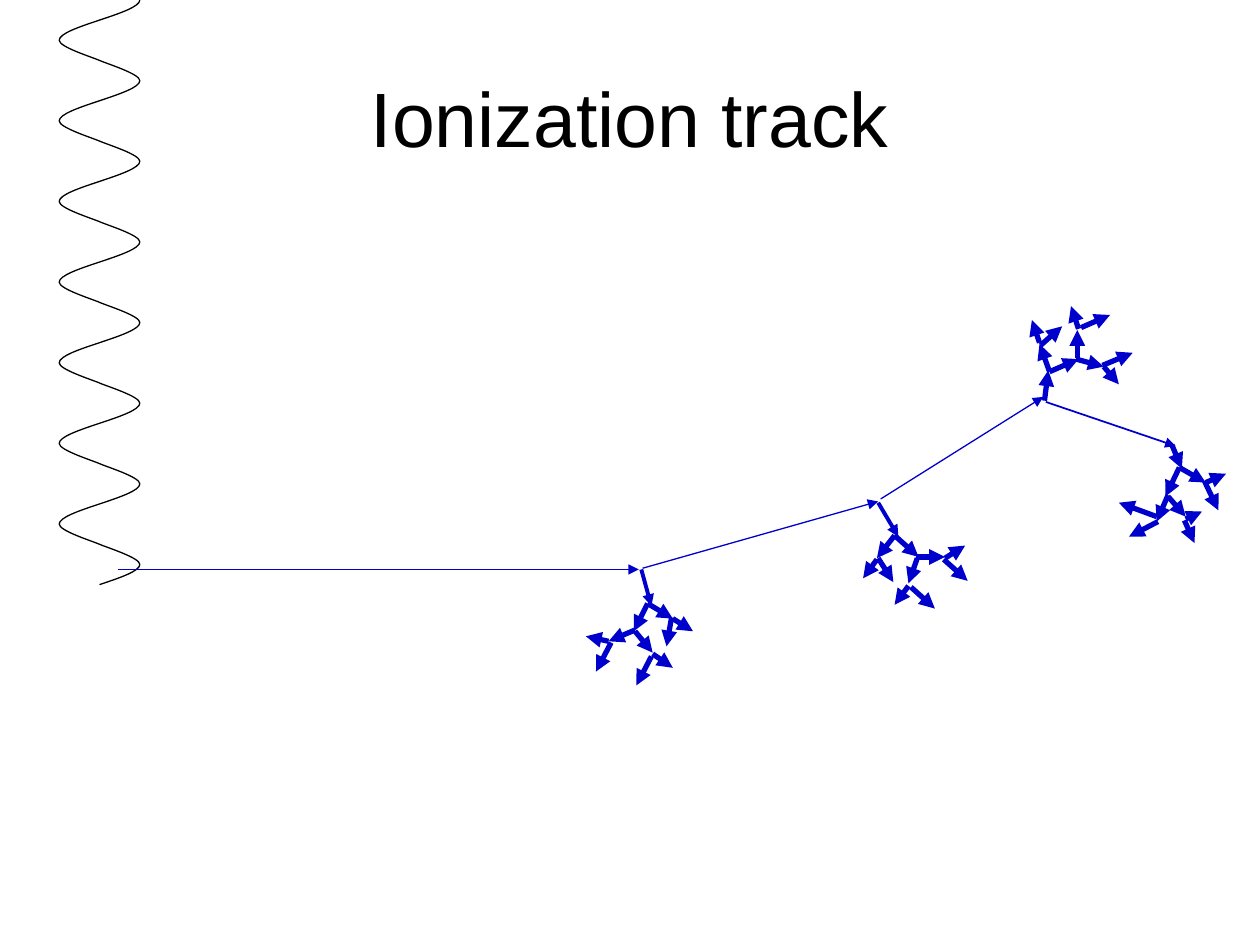
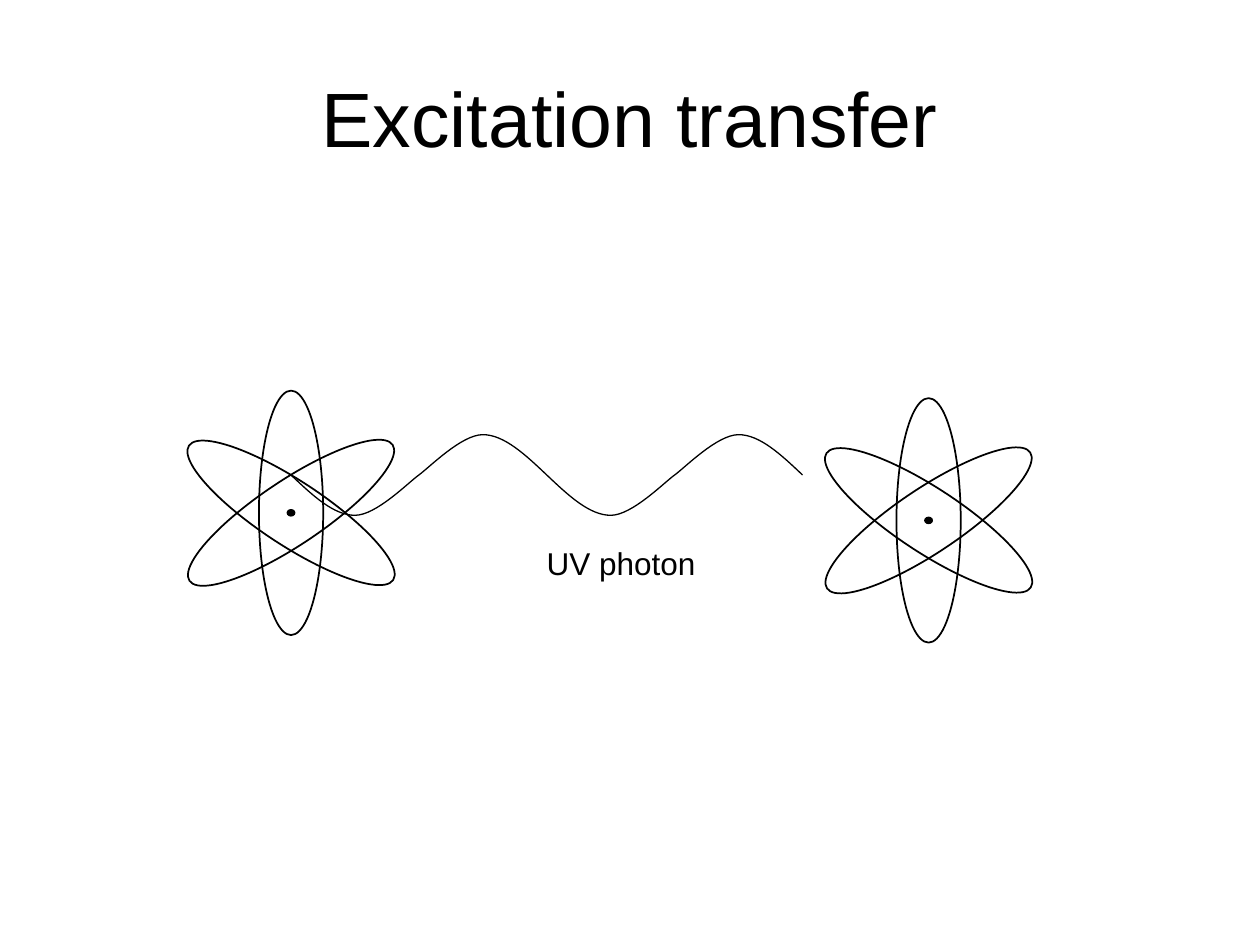
from lxml.etree import SubElement
from pptx import Presentation
from pptx.dml.color import RGBColor
from pptx.enum.shapes import MSO_CONNECTOR, MSO_SHAPE
from pptx.enum.text import MSO_ANCHOR, MSO_AUTO_SIZE, PP_ALIGN
from pptx.oxml.ns import qn
from pptx.util import Emu, Pt

PX = 9144  # 100 px to the inch
COLORS = {"ink": "000000", "electron": "0000CC"}
FONT = "Arial"
TITLE_BOX = (50, 30, 900, 125)

# One half wave: (share of the length, share of the swing), as two cubic curves
LOBE = [(0, 0), (1 / 6, 0.5), (1 / 3, 1), (0.5, 1), (2 / 3, 1), (11 / 12, 0.19), (1, 0)]
OPPOSITE_LOBE = [(1 - along, -across) for along, across in reversed(LOBE)]

# Primary electron path: x1, y1, x2, y2, line width
TRACK = [
    (94, 452, 507, 452, 0.5),
    (510, 451, 697, 398, 0.75),
    (699, 396, 828, 315, 0.75),
    (830, 319, 933, 354, 1),
]

# Avalanches: origin, width of the first arrow, arrows relative to the origin
AVALANCHES = [
    ((509, 452), 2.25, [
        (0, 0, 8, 29), (5, 27, -6, 49), (-5, 48, -26, 57), (-5, 49, 9, 66),
        (8, 69, -4, 92), (5, 27, 25, 39), (-24, 58, -36, 81), (-26, 57, -44, 53),
        (24, 38, 20, 61), (25, 39, 41, 49), (9, 67, 25, 78)]),
    ((697, 399), 2.25, [
        (0, 0, 16, 27), (13, 26, 32, 43), (30, 43, 53, 43), (31, 44, 24, 64),
        (26, 67, 45, 84), (13, 26, -1, 44), (52, 45, 71, 62), (53, 44, 69, 34),
        (0, 44, 12, 63), (-1, 45, -12, 60), (24, 66, 13, 81)]),
    ((829, 318), 3, [
        (0, 0, 3, -24), (4, -23, 27, -33), (25, -33, 47, -27), (26, -34, 26, -56),
        (29, -58, 52, -68), (4, -23, -4, -45), (46, -28, 70, -38), (47, -27, 59, -13),
        (-3, -44, 14, -59), (-4, -46, -10, -64), (27, -57, 21, -75)]),
    ((930, 353), 3, [
        (0, 0, 8, 19), (6, 18, -5, 41), (-3, 40, -12, 61), (-3, 41, 11, 57),
        (10, 60, 18, 78), (6, 18, 27, 30), (-11, 61, -34, 73), (-12, 57, -42, 46),
        (26, 29, 37, 52), (27, 30, 43, 23), (11, 59, 24, 53)]),
]


def px(*lengths):
    return [Emu(round(length * PX)) for length in lengths]


def color(name):
    return RGBColor.from_string(COLORS[name])


def write_text(shape, text, *, size, align=PP_ALIGN.LEFT, anchor=MSO_ANCHOR.TOP, wrap=True):
    frame = shape.text_frame
    frame.word_wrap = wrap
    frame.vertical_anchor = anchor
    paragraph = frame.paragraphs[0]
    paragraph.text = text
    paragraph.alignment = align
    paragraph.font.name = FONT
    paragraph.font.size = Pt(size)
    paragraph.font.color.rgb = color("ink")


def set_line(shape, name, width):
    shape.line.color.rgb = color(name)
    shape.line.width = Pt(width)


def add_titled_slide(presentation, text):
    slide = presentation.slides.add_slide(presentation.slide_layouts[5])
    title = slide.shapes.title
    title.left, title.top, title.width, title.height = px(*TITLE_BOX)
    write_text(title, text, size=44, align=PP_ALIGN.CENTER, anchor=MSO_ANCHOR.MIDDLE)
    return slide


def add_arrow(slide, x1, y1, x2, y2, width):
    arrow = slide.shapes.add_connector(MSO_CONNECTOR.STRAIGHT, *px(x1, y1, x2, y2))
    set_line(arrow, "electron", width)
    SubElement(arrow.line._get_or_add_ln(), qn("a:tailEnd"), type="triangle")
    SubElement(arrow._element.spPr, qn("a:effectLst"))


def add_wave(slide, start, step, swing, count):
    """Draw count half waves, each advancing by step and swinging out by swing."""
    points = [start]
    for index in range(count):
        for along, across in (OPPOSITE_LOBE if index % 2 else LOBE)[1:]:
            points.append(tuple(
                start[axis] + step[axis] * (index + along) + swing[axis] * across
                for axis in (0, 1)))
    builder = slide.shapes.build_freeform(*px(*start))
    builder.add_line_segments([px(*point) for point in points[1:]], close=False)
    wave = builder.convert_to_shape()
    wave.shadow.inherit = False
    wave.fill.background()
    set_line(wave, "ink", 0.75)
    # Turn every three segments into one cubic curve
    outline = wave._element.find(".//" + qn("a:path"))
    segments = outline.findall(qn("a:lnTo"))
    for first in range(0, len(segments), 3):
        curve = SubElement(outline, qn("a:cubicBezTo"))
        for segment in segments[first:first + 3]:
            curve.append(segment[0])
            outline.remove(segment)


def add_avalanche(slide, origin, first_width, arrows):
    left, top = origin
    for index, (x1, y1, x2, y2) in enumerate(arrows):
        add_arrow(slide, left + x1, top + y1, left + x2, top + y2,
                  3 if index else first_width)


def add_ellipse(slide, center, size, rotation, line_width, filled=False):
    (x, y), (width, height) = center, size
    ellipse = slide.shapes.add_shape(
        MSO_SHAPE.OVAL, *px(x - width / 2, y - height / 2, width, height))
    ellipse.rotation = rotation
    ellipse.shadow.inherit = False
    if filled:
        ellipse.fill.solid()
        ellipse.fill.fore_color.rgb = color("ink")
    else:
        ellipse.fill.background()
    set_line(ellipse, "ink", line_width)


def add_atom(slide, center):
    for rotation in (270, 213.3, 326.2):
        add_ellipse(slide, center, (194, 51), rotation, 1)
    add_ellipse(slide, center, (5, 6), 270, 0.75, filled=True)


def build_ionization_slide(presentation):
    slide = add_titled_slide(presentation, "Ionization track")
    # Incoming photon
    add_wave(slide, start=(79, 464), step=(0, -32), swing=(32, 0), count=15)
    # Electron track and its avalanches
    for segment in TRACK:
        add_arrow(slide, *segment)
    for avalanche in AVALANCHES:
        add_avalanche(slide, *avalanche)


def build_excitation_slide(presentation):
    slide = add_titled_slide(presentation, "Excitation transfer")
    # Receiving atom, photon, emitting atom
    add_atom(slide, (737, 413))
    add_wave(slide, start=(231, 377), step=(101.5, 0), swing=(0, 32), count=4)
    label = slide.shapes.add_textbox(*px(424, 427, 138, 40))
    write_text(label, "UV photon", size=18, wrap=False)
    label.text_frame.auto_size = MSO_AUTO_SIZE.SHAPE_TO_FIT_TEXT
    add_atom(slide, (231, 407))


def main():
    presentation = Presentation()
    presentation.slide_width, presentation.slide_height = px(1000, 750)
    build_ionization_slide(presentation)
    build_excitation_slide(presentation)
    presentation.save("out.pptx")


if __name__ == "__main__":
    main()
